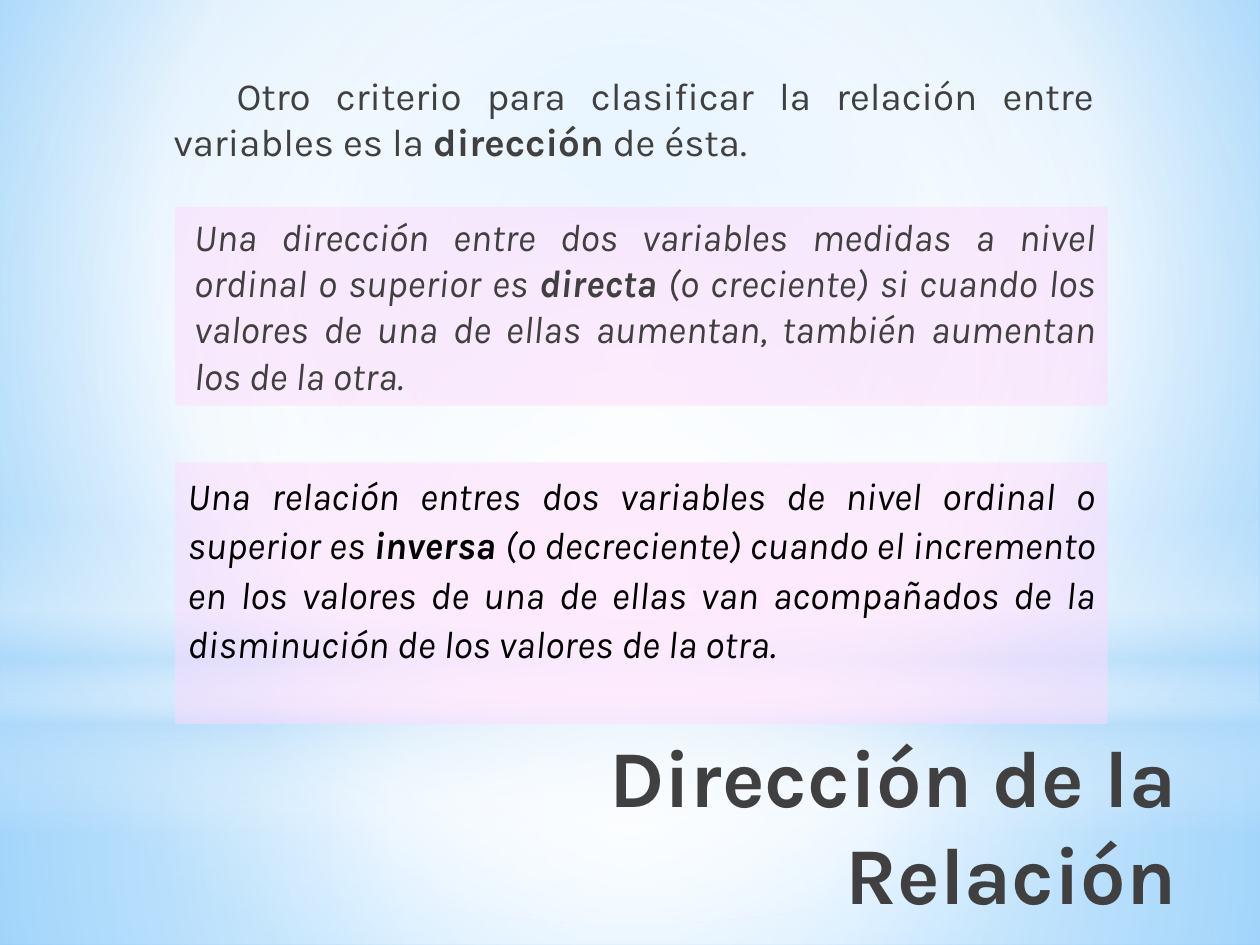
from dataclasses import dataclass

from lxml.etree import SubElement
from pptx import Presentation
from pptx.dml.color import RGBColor
from pptx.enum.shapes import MSO_SHAPE
from pptx.enum.text import MSO_ANCHOR, MSO_AUTO_SIZE, PP_ALIGN
from pptx.oxml import parse_xml
from pptx.oxml.ns import nsdecls, qn
from pptx.util import Cm, Pt


@dataclass(frozen=True)
class Theme:
    """Colours and type of the deck."""
    font: str = "Karla"
    title_size: int = 46
    body_size: int = 22
    grey: str = "404040"
    black: str = "000000"
    panel: str = "FEDAFD"
    panel_opacity: int = 50
    white: str = "FFFFFF"
    haze: str = "B4DCFA"
    sky: str = "9ED5FF"
    deep_sky: str = "5BB9FF"


THEME = Theme()
CENTRE = (50, 50, 50, 50)


def lengths(box):
    """Turn a box in centimetres into lengths."""
    return [Cm(value) for value in box]


def set_gradient(fill, owner, stops, focus=None):
    """Fill with a circular gradient around focus, or a vertical one."""
    fill.solid()
    solid = next(owner.iter(qn("a:solidFill")))
    gradient = parse_xml(f'<a:gradFill {nsdecls("a")} rotWithShape="1"><a:gsLst/></a:gradFill>')
    for position, colour, opacity in stops:
        stop = SubElement(gradient[0], qn("a:gs"), pos=str(position * 1000))
        tint = SubElement(stop, qn("a:srgbClr"), val=colour)
        if opacity < 100:
            SubElement(tint, qn("a:alpha"), val=str(opacity * 1000))
    if focus:
        path = SubElement(gradient, qn("a:path"), path="circle")
        sides = {side: str(value * 1000) for side, value in zip("ltrb", focus)}
        SubElement(path, qn("a:fillToRect"), **sides)
    else:
        SubElement(gradient, qn("a:lin"), ang="5400000", scaled="0")
    solid.getparent().replace(solid, gradient)


def add_plain_shape(page, kind, box):
    """Add a shape without line or shadow."""
    shape = page.shapes.add_shape(kind, *lengths(box))
    shape.shadow.inherit = False
    shape.line.fill.background()
    return shape


def add_backdrop(page, box):
    """Paint the sky, ground, horizon and central glow."""
    left, top, width, height = box
    white, haze = THEME.white, THEME.haze
    set_gradient(page.background.fill, page.element,
                 [(0, THEME.sky, 100), (60, white, 100), (100, THEME.deep_sky, 100)],
                 (20, 10, 20, 60))
    horizon = 14.17
    layers = [
        (MSO_SHAPE.RECTANGLE, horizon, height - horizon,
         [(0, white, 91), (37, white, 76), (100, haze, 79)], CENTRE),
        (MSO_SHAPE.RECTANGLE, 0, horizon,
         [(0, white, 89), (48, white, 62), (100, haze, 79)], CENTRE),
        (MSO_SHAPE.RECTANGLE, 10.46, 6.35,
         [(0, white, 0), (29, white, 30), (45, haze, 40),
          (55, white, 26), (65, haze, 60), (100, white, 0)], None),
        (MSO_SHAPE.OVAL, 4.45, horizon, [(0, white, 100), (56, white, 0)], CENTRE),
    ]
    for kind, offset, depth, stops, focus in layers:
        shape = add_plain_shape(page, kind, (left, top + offset, width, depth))
        set_gradient(shape.fill, shape.element, stops, focus)


def style_font(font, size, colour):
    """Apply the deck font with a size and colour."""
    font.name = THEME.font
    font.size = Pt(size)
    font.color.rgb = RGBColor.from_string(colour)


def place_title(page, box, text):
    """Move the title to the front and format it."""
    title = page.shapes.title
    title.element.getparent().append(title.element)
    title.left, title.top, title.width, title.height = lengths(box)
    frame = title.text_frame
    frame.text = text
    frame.auto_size = MSO_AUTO_SIZE.NONE
    frame.vertical_anchor = MSO_ANCHOR.TOP
    para = frame.paragraphs[0]
    para.alignment = PP_ALIGN.RIGHT
    para.font.bold = True
    style_font(para.font, THEME.title_size, THEME.grey)


def write_statement(shape, before, term, after, colour=THEME.grey, italic=False, inset=0.38):
    """Write a justified sentence with one bold term."""
    frame = shape.text_frame
    frame.word_wrap = True
    frame.vertical_anchor = MSO_ANCHOR.TOP
    frame.margin_left = Cm(inset)
    para = frame.paragraphs[0]
    para.alignment = PP_ALIGN.JUSTIFY
    para.font.italic = italic
    style_font(para.font, THEME.body_size, colour)
    for text in (before, term, after):
        span = para.add_run()
        span.text = text
        span.font.bold = text == term
    return para


def add_intro(page, box, *parts):
    """Add the opening sentence."""
    para = write_statement(page.shapes.add_textbox(*lengths(box)), *parts)
    para.space_before, para.space_after = Pt(4.4), Pt(3)


def add_panel(page, box, *parts, **style):
    """Add a definition on a translucent panel."""
    panel = add_plain_shape(page, MSO_SHAPE.RECTANGLE, box)
    panel.fill.solid()
    panel.fill.fore_color.rgb = RGBColor.from_string(THEME.panel)
    tint = next(panel.element.iter(qn("a:srgbClr")))
    SubElement(tint, qn("a:alpha"), val=str(THEME.panel_opacity * 1000))
    return write_statement(panel, *parts, italic=True, **style)


def build_direction_slide(deck):
    """Build the slide on the direction of a relation."""
    page = deck.slides.add_slide(deck.slide_layouts[5])
    add_backdrop(page, (0, 0, 25.4, 19.05))
    place_title(page, (5.89, 14.53, 18.08, 3.99), "Dirección de la Relación")
    add_intro(page, (3.12, 1.32, 19.18, 6.1),
              "\tOtro criterio para clasificar la relación entre variables es la ",
              "dirección", " de ésta. ")
    direct = add_panel(
        page, (3.53, 4.17, 18.8, 4.01),
        "Una dirección entre dos variables medidas a nivel ordinal o superior es ", "directa",
        " (o creciente) si cuando los valores de una de ellas aumentan, "
        "también aumentan los de la otra.")
    direct.space_before, direct.space_after = Pt(4.4), Pt(3)
    inverse = add_panel(
        page, (3.53, 9.32, 18.8, 5.28),
        "Una relación entres dos variables de nivel ordinal o superior es ", "inversa ",
        "(o decreciente) cuando el incremento en los valores de una de ellas van "
        "acompañados de la disminución de los valores de la otra. ",
        colour=THEME.black, inset=0.25)
    inverse.line_spacing, inverse.space_after = 1.07, Pt(8)


def main():
    """Build and save the deck."""
    deck = Presentation()
    deck.slide_width, deck.slide_height = Cm(25.4), Cm(19.05)
    build_direction_slide(deck)
    deck.save("out.pptx")


if __name__ == "__main__":
    main()
